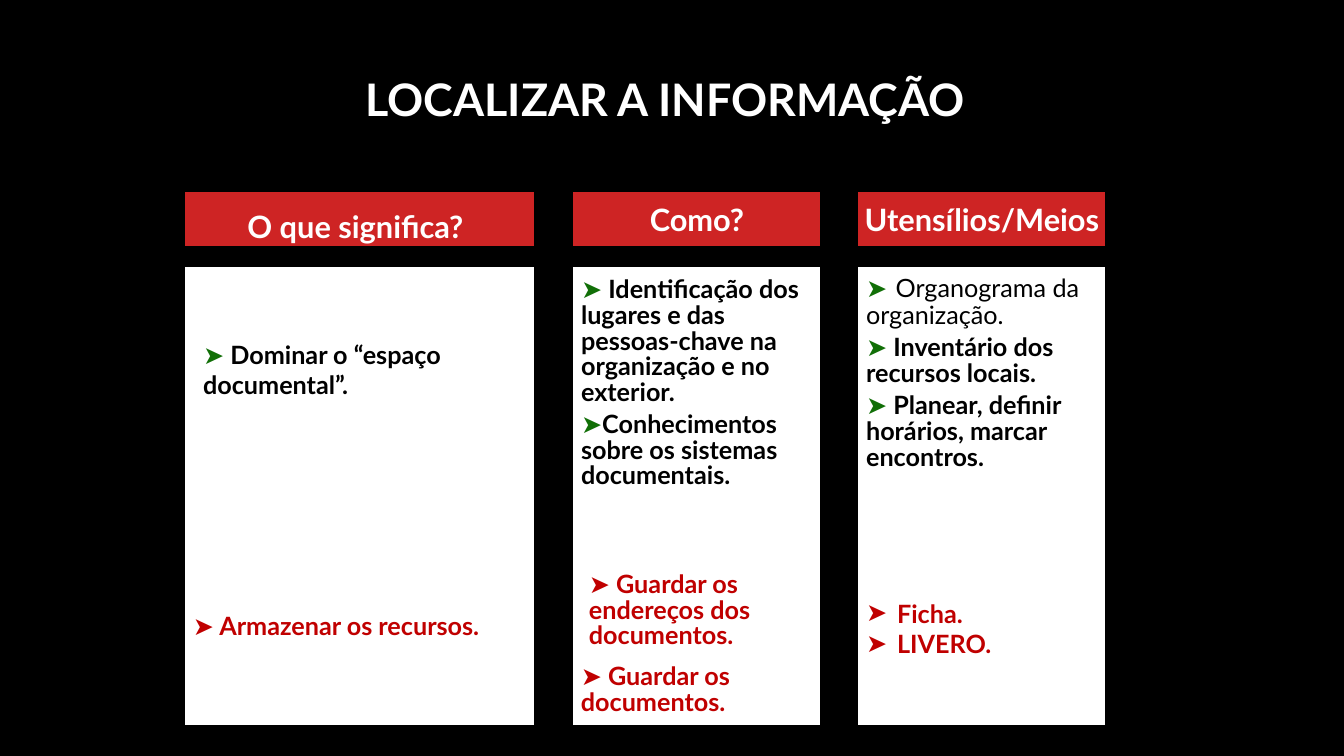
"""Build the slide on locating information: three columns of lists with red headings."""
from lxml.etree import SubElement
from pptx import Presentation
from pptx.dml.color import RGBColor
from pptx.enum.shapes import MSO_SHAPE
from pptx.enum.text import MSO_ANCHOR, MSO_AUTO_SIZE, PP_ALIGN
from pptx.oxml.ns import qn
from pptx.util import Pt

PX = 914400 / 100.8
BLACK = RGBColor(0x00, 0x00, 0x00)
WHITE = RGBColor(0xFF, 0xFF, 0xFF)
HEADING_RED = RGBColor(0xCE, 0x24, 0x24)
TEXT_RED = RGBColor(0xC0, 0x00, 0x00)
GREEN = RGBColor(0x11, 0x6F, 0x07)
FONT = "Lato"
ARROW = "➤"


def px(*lengths):
    return [round(length * PX) for length in lengths]


def format_run(run, size, color, bold=True, name=FONT):
    run.font.size = Pt(size)
    run.font.color.rgb = color
    run.font.bold = bold
    run.font.name = name


presentation = Presentation()
presentation.slide_width, presentation.slide_height = px(1344, 756)
slide = presentation.slides.add_slide(presentation.slide_layouts.get_by_name("Comparison"))
slide.background.fill.solid()
slide.background.fill.fore_color.rgb = BLACK

title = slide.shapes.title
title.left, title.top, title.width, title.height = px(0, 70, 1331, 61)
title.text_frame.text = "LOCALIZAR A INFORMAÇÃO"
title.text_frame.vertical_anchor = MSO_ANCHOR.BOTTOM
title.text_frame.auto_size = MSO_AUTO_SIZE.NONE
title_paragraph = title.text_frame.paragraphs[0]
title_paragraph.alignment = PP_ALIGN.CENTER
title_paragraph.line_spacing = 0.9
format_run(title_paragraph.runs[0], 32, WHITE)

columns = [
    (183, 353, "O que significa?"),
    (571, 252, "Como?"),
    (856, 252, "Utensílios/Meios"),
]
headings = []
for left, width, heading in columns:
    for top, height, fill, text in [(265, 462, WHITE, ""), (190, 58, HEADING_RED, heading)]:
        shape = slide.shapes.add_shape(MSO_SHAPE.RECTANGLE, *px(left, top, width, height))
        shape.shadow.inherit = False
        shape.fill.solid()
        shape.fill.fore_color.rgb = fill
        shape.line.color.rgb = BLACK
        shape.line.width = Pt(3.5)
        if text:
            shape.text_frame.text = text
            shape.text_frame.word_wrap = False
            shape.text_frame.vertical_anchor = MSO_ANCHOR.MIDDLE
            shape.text_frame.paragraphs[0].alignment = PP_ALIGN.CENTER
            format_run(shape.text_frame.paragraphs[0].runs[0], 22, WHITE)
            headings.append(shape)

first_frame = headings[0].text_frame
first_frame.margin_top, first_frame.margin_bottom, first_frame.margin_right = px(14, 0, 18)

lists = [
    (1, (193, 334, 336, 177), 1, 0, [
        [(ARROW, GREEN), (" Dominar o “espaço documental”.", BLACK)],
    ]),
    (2, (571, 273, 252, 224), 0.85, 4.5, [
        [(ARROW + " ", GREEN),
         ("Identificação dos lugares e das pessoas-chave na organização e no exterior.", BLACK)],
        [(ARROW, GREEN), ("Conhecimentos sobre os sistemas documentais.", BLACK)],
    ]),
    (3, (856, 265, 252, 214), 0.85, 4.5, [
        [(ARROW, GREEN), (" ", BLACK), ("Organograma da organização.", BLACK)],
        [(ARROW + " ", GREEN), ("Inventário dos recursos locais.", BLACK)],
        [(ARROW + " ", GREEN), ("Planear, definir horários, marcar encontros.", BLACK)],
    ]),
    (4, (856, 593, 260, 72), 1, 0, [[("Ficha.", TEXT_RED)], [("LIVERO.", TEXT_RED)]]),
    (None, (183, 610, 336, 36), 0.85, 4.5, [[(ARROW + " Armazenar os recursos.", TEXT_RED)]]),
    (None, (579, 568, 260, 88), 0.85, 4.5,
     [[(ARROW + " Guardar os endereços dos documentos.", TEXT_RED)]]),
    (None, (571, 660, 260, 61), 0.85, 4.5, [[(ARROW + " Guardar os documentos.", TEXT_RED)]]),
]
frames = {}
for index, box, line_spacing, space_before, paragraphs in lists:
    if index is None:
        shape = slide.shapes.add_textbox(*px(*box))
    else:
        shape = slide.placeholders[index]
        shape.left, shape.top, shape.width, shape.height = px(*box)
        slide.shapes.element.append(shape.element)
        frames[index] = shape.text_frame
    text_frame = shape.text_frame
    text_frame.word_wrap = True
    text_frame.auto_size = MSO_AUTO_SIZE.NONE
    text_frame.vertical_anchor = MSO_ANCHOR.TOP
    for number, runs in enumerate(paragraphs):
        paragraph = text_frame.add_paragraph() if number else text_frame.paragraphs[0]
        paragraph.alignment = PP_ALIGN.LEFT
        paragraph.line_spacing = line_spacing
        paragraph.space_before = Pt(space_before)
        paragraph.space_after = Pt(0)
        properties = paragraph._p.get_or_add_pPr()
        indent = px(31)[0] if index == 4 else 0
        properties.set("marL", str(indent))
        properties.set("indent", str(-indent))
        if indent:
            SubElement(properties, qn("a:buChar")).set("char", ARROW)
        else:
            SubElement(properties, qn("a:buNone"))
        for text, color in runs:
            run = paragraph.add_run()
            run.text = text
            format_run(run, 18, color)

arrow_run, space_run, chart_run = frames[3].paragraphs[0].runs
format_run(space_run, 24, BLACK, False, "Times New Roman")
chart_run.font.bold = False

presentation.save("out.pptx")
